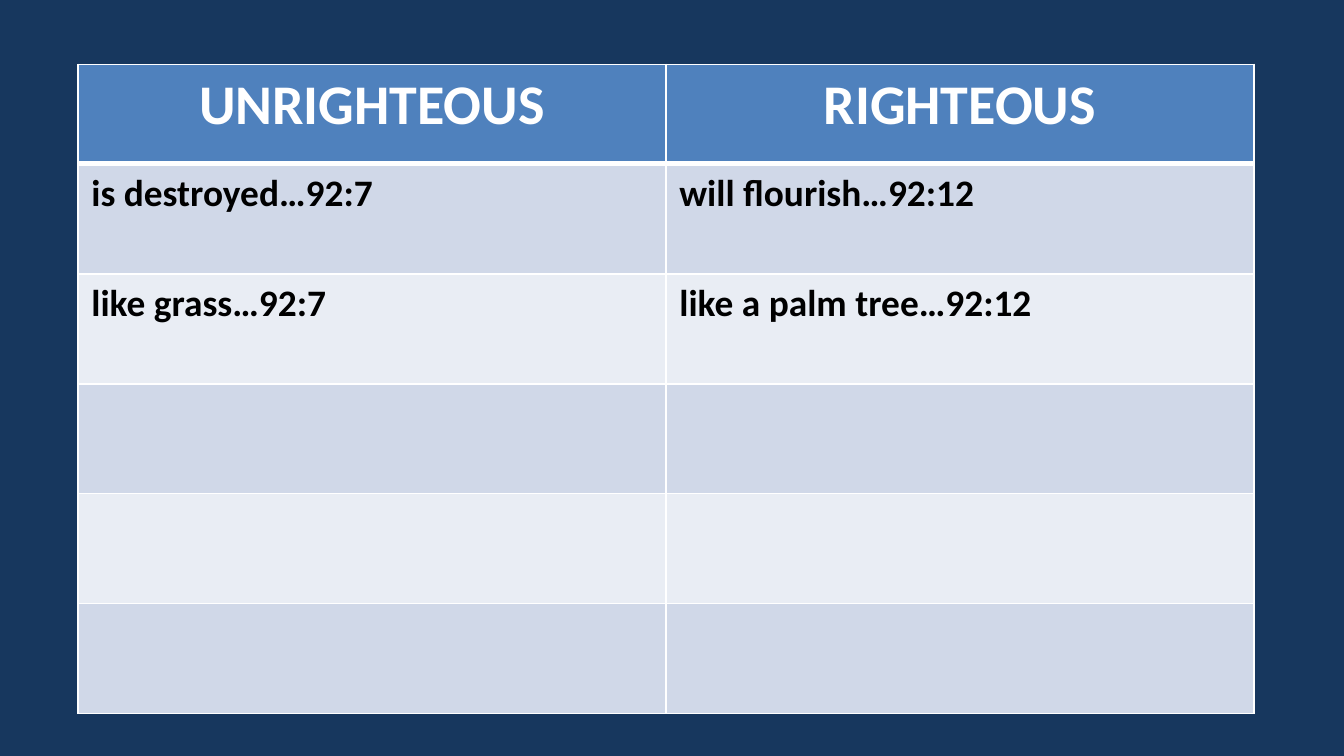
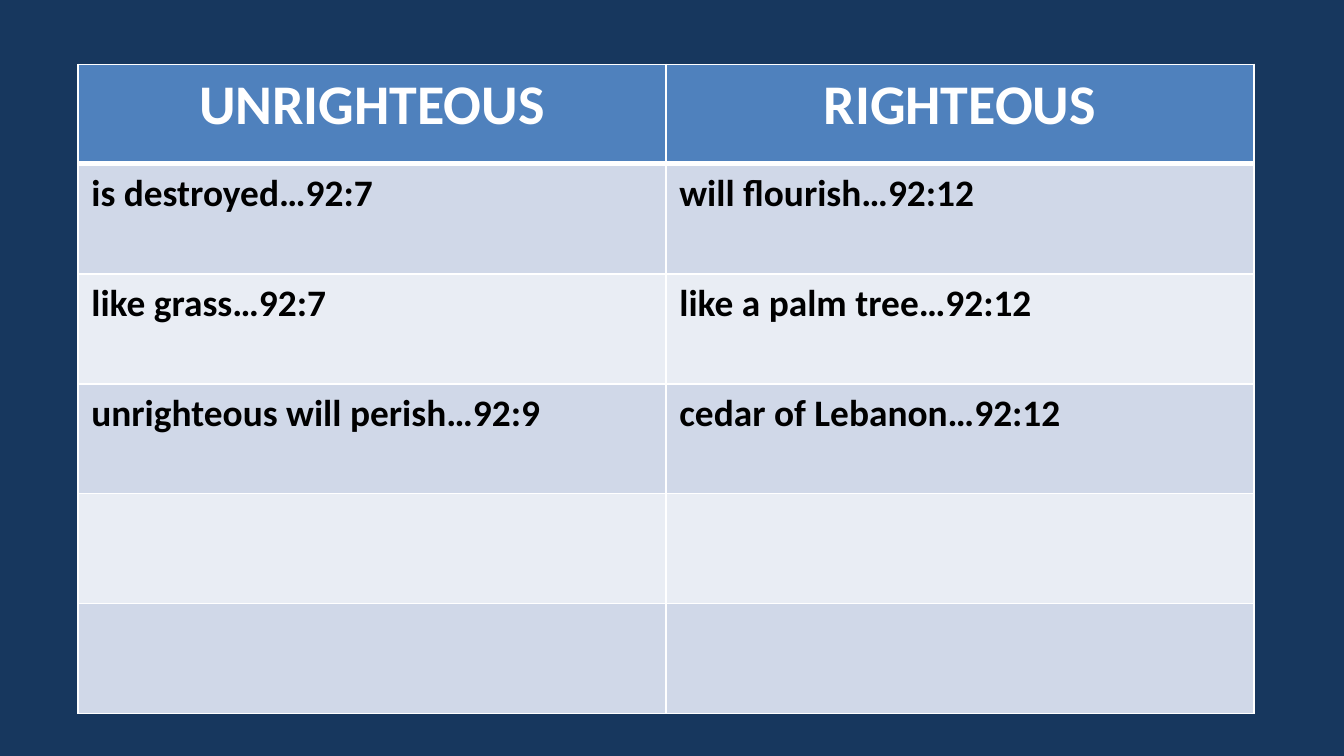
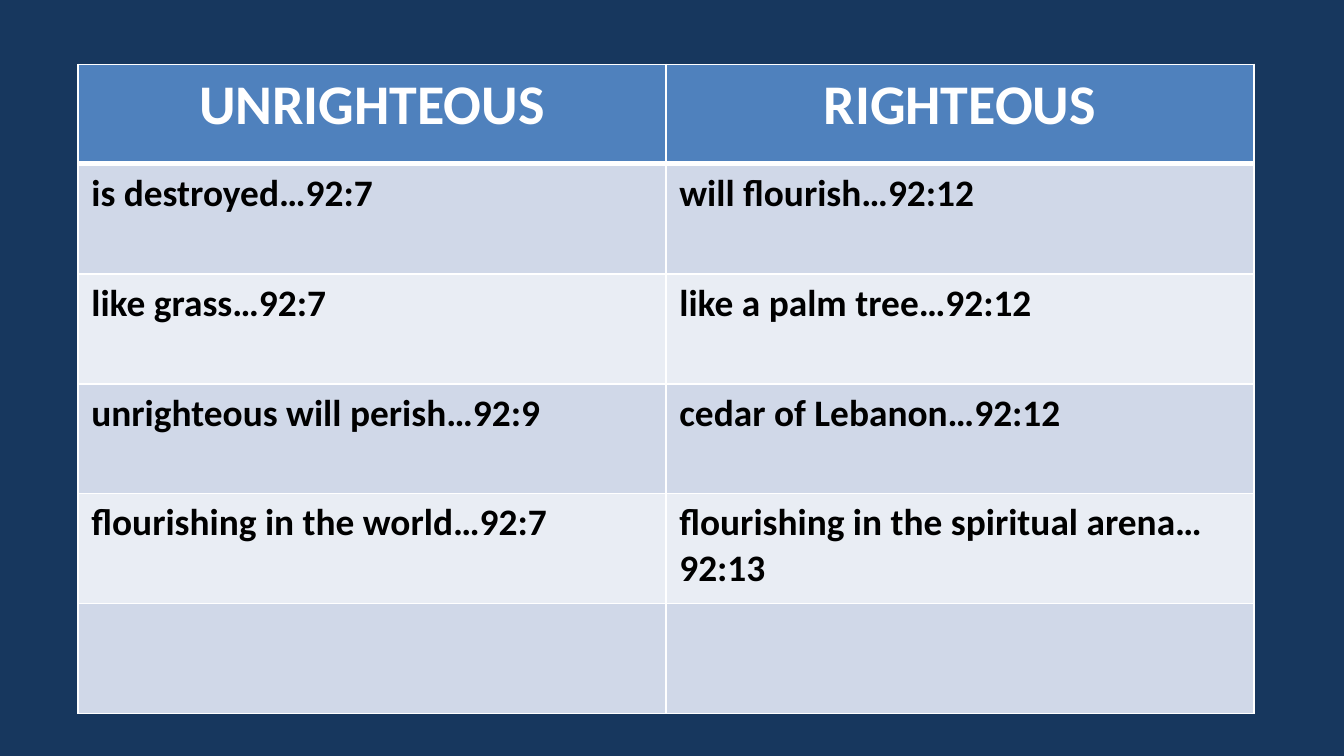
from dataclasses import dataclass

from lxml.etree import SubElement
from pptx import Presentation
from pptx.dml.color import RGBColor
from pptx.enum.text import PP_ALIGN
from pptx.oxml.ns import qn
from pptx.presentation import Presentation as Deck
from pptx.table import _Cell
from pptx.util import Inches, Pt


@dataclass(frozen=True)
class Theme:
    background: str = "17375E"
    header_fill: str = "4F81BD"
    bands: tuple[str, str] = ("D0D8E8", "E9EDF4")
    border: str = "FFFFFF"
    header_text: str = "FFFFFF"
    body_text: str = "000000"
    font: str = "Calibri"
    header_size: int = 30
    body_size: int = 20
    thin_line: int = 1
    header_line: int = 3


@dataclass(frozen=True)
class CellStyle:
    fill: str
    text_color: str
    size: int
    align: PP_ALIGN
    top_line: int
    bottom_line: int


@dataclass(frozen=True)
class Contrast:
    unrighteous: str
    righteous: str


THEME = Theme()
SLIDE_WIDTH = Inches(10)
SLIDE_HEIGHT = SLIDE_WIDTH * 9 // 16
LEFT, TOP = Inches(0.58), Inches(0.48)
TABLE_WIDTH, TABLE_HEIGHT = Inches(8.75), Inches(4.83)
BODY_ROWS = 5
COLUMN_WIDTH = TABLE_WIDTH // 2
HEADER_HEIGHT = Inches(0.74)
BODY_HEIGHT = (TABLE_HEIGHT - HEADER_HEIGHT) // BODY_ROWS

HEADING = Contrast("UNRIGHTEOUS", "RIGHTEOUS")
CONTRASTS = [
    Contrast("is destroyed…92:7", "will flourish…92:12"),
    Contrast("like grass…92:7", "like a palm tree…92:12"),
    Contrast("unrighteous will perish…92:9", "cedar of Lebanon…92:12"),
    Contrast("flourishing in the world…92:7", "flourishing in the spiritual arena…92:13"),
]
REVEALED_PER_SLIDE = (2, 3, 4)


def row_style(row: int) -> CellStyle:
    if row == 0:
        return CellStyle(THEME.header_fill, THEME.header_text, THEME.header_size,
                         PP_ALIGN.CENTER, THEME.thin_line, THEME.header_line)
    top_line = THEME.header_line if row == 1 else THEME.thin_line
    return CellStyle(THEME.bands[(row - 1) % 2], THEME.body_text, THEME.body_size,
                     PP_ALIGN.LEFT, top_line, THEME.thin_line)


def draw_borders(cell: _Cell, style: CellStyle) -> None:
    properties = cell._tc.get_or_add_tcPr()
    widths = {"a:lnL": THEME.thin_line, "a:lnR": THEME.thin_line,
              "a:lnT": style.top_line, "a:lnB": style.bottom_line}
    for side, width in widths.items():
        line = SubElement(properties, qn(side), w=str(Pt(width)))
        fill = SubElement(line, qn("a:solidFill"))
        SubElement(fill, qn("a:srgbClr"), val=THEME.border)


def fill_cell(cell: _Cell, text: str, style: CellStyle) -> None:
    draw_borders(cell, style)
    cell.fill.solid()
    cell.fill.fore_color.rgb = RGBColor.from_string(style.fill)
    if not text:
        return
    paragraph = cell.text_frame.paragraphs[0]
    paragraph.alignment = style.align
    run = paragraph.add_run()
    run.text = text
    font_format = {"name": THEME.font, "size": Pt(style.size), "bold": True}
    for attribute, value in font_format.items():
        setattr(run.font, attribute, value)
    run.font.color.rgb = RGBColor.from_string(style.text_color)


def add_contrast_slide(deck: Deck, revealed: int) -> None:
    """Add the full grid, with only the first `revealed` contrasts written in."""
    slide = deck.slides.add_slide(deck.slide_layouts[6])
    slide.background.fill.solid()
    slide.background.fill.fore_color.rgb = RGBColor.from_string(THEME.background)

    blanks = [Contrast("", "")] * (BODY_ROWS - revealed)
    contrasts = [HEADING, *CONTRASTS[:revealed], *blanks]
    table = slide.shapes.add_table(
        len(contrasts), 2, LEFT, TOP, TABLE_WIDTH, TABLE_HEIGHT).table
    table.first_row = table.horz_banding = False
    for column in table.columns:
        column.width = COLUMN_WIDTH
    for row, contrast in enumerate(contrasts):
        table.rows[row].height = BODY_HEIGHT if row else HEADER_HEIGHT
        for column, text in enumerate((contrast.unrighteous, contrast.righteous)):
            fill_cell(table.cell(row, column), text, row_style(row))


def main() -> None:
    deck = Presentation()
    deck.slide_width, deck.slide_height = SLIDE_WIDTH, SLIDE_HEIGHT
    for revealed in REVEALED_PER_SLIDE:
        add_contrast_slide(deck, revealed)
    deck.save("out.pptx")


if __name__ == "__main__":
    main()
